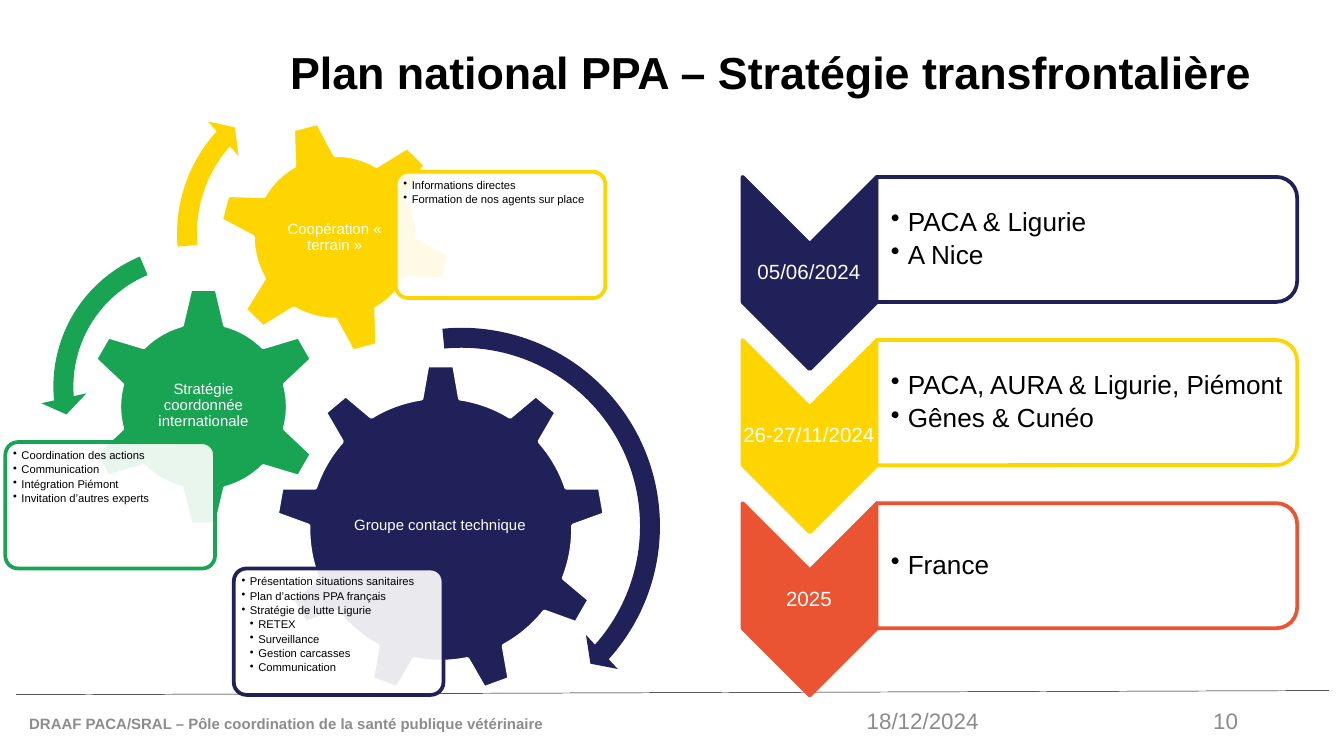
from lxml import etree
from pptx import Presentation
from pptx.dml.color import RGBColor
from pptx.enum.shapes import MSO_CONNECTOR, MSO_SHAPE
from pptx.enum.text import MSO_ANCHOR, PP_ALIGN
from pptx.oxml.ns import qn
from pptx.util import Pt

LEFT, CENTER, RIGHT = PP_ALIGN.LEFT, PP_ALIGN.CENTER, PP_ALIGN.RIGHT
TOP, MIDDLE = MSO_ANCHOR.TOP, MSO_ANCHOR.MIDDLE
GEAR_6, GEAR_9 = MSO_SHAPE.GEAR_6, MSO_SHAPE.GEAR_9
ARC, LEFT_ARC = MSO_SHAPE.CIRCULAR_ARROW, MSO_SHAPE.LEFT_CIRCULAR_ARROW
ROUNDED, ROUND_TOP = MSO_SHAPE.ROUNDED_RECTANGLE, MSO_SHAPE.ROUND_2_SAME_RECTANGLE
CHEVRON = MSO_SHAPE.CHEVRON

COLORS = {
    "navy": "21215A", "green": "19A453", "yellow": "FFD500", "orange": "EA5433",
    "white": "FFFFFF", "black": "000000", "gray": "8C8C8C",
}

presentation = Presentation()
presentation.slide_width, presentation.slide_height = Pt(720), Pt(405)
slide = presentation.slides.add_slide(presentation.slide_layouts[6])


def add_shape(kind, box, fill, line=None, rotation=0, adjustments=(), opacity=100):
    shape = slide.shapes.add_shape(kind, *[Pt(length) for length in box])
    shape.shadow.inherit = False
    shape.rotation = rotation
    for index, value in enumerate(adjustments):
        shape.adjustments[index] = value
    shape.fill.solid()
    shape.fill.fore_color.rgb = RGBColor.from_string(COLORS[fill])
    if opacity < 100:
        color = shape.fill._xPr.find(qn("a:solidFill"))[0]
        etree.SubElement(color, qn("a:alpha"), val=str(opacity * 1000))
    if line:
        shape.line.color.rgb = RGBColor.from_string(COLORS[line])
        shape.line.width = Pt(2)
    else:
        shape.line.fill.background()


def add_text(box, lines, size, color, insets=(7.2, 3.6, 7.2, 3.6), align=LEFT,
             anchor=MIDDLE, bold=False, spacing=0.9, indent=0):
    """Write (level, text) lines; a non-zero indent makes them bullets."""
    frame = slide.shapes.add_textbox(*[Pt(length) for length in box]).text_frame
    frame.word_wrap = True
    frame.vertical_anchor = anchor
    (frame.margin_left, frame.margin_top,
     frame.margin_right, frame.margin_bottom) = [Pt(inset) for inset in insets]
    for index, (level, text) in enumerate(lines):
        paragraph = frame.paragraphs[0] if index == 0 else frame.add_paragraph()
        if indent:
            properties = paragraph._p.get_or_add_pPr()
            properties.set("marL", str(Pt(indent * level)))
            properties.set("indent", str(-Pt(indent)))
            etree.SubElement(properties, qn("a:buChar"), char="•")
            paragraph.level = level
            paragraph.space_after = Pt(size * 0.2)
        paragraph.alignment = align
        paragraph.line_spacing = spacing
        run = paragraph.add_run()
        run.text = text
        run.font.name = "Arial"
        run.font.size = Pt(size)
        run.font.bold = bold
        run.font.color.rgb = RGBColor.from_string(COLORS[color])


# Footer rule
rule = slide.shapes.add_connector(
    MSO_CONNECTOR.STRAIGHT, Pt(8.6), Pt(372.2), Pt(712), Pt(370))
rule.line.color.rgb = RGBColor.from_string(COLORS["black"])
rule.line.width = Pt(0.25)
etree.SubElement(rule._element.spPr, qn("a:effectLst"))

# Footer texts and title
add_text((8.6, 376.6, 297.4, 21.6),
         [(0, "DRAAF PACA/SRAL – Pôle coordination de la santé publique vétérinaire")],
         8, "gray", bold=True, spacing=1)
add_text((625.7, 375.1, 44.6, 21.6), [(0, "10")], 12, "gray", align=RIGHT, spacing=1)
add_text((457.2, 375.1, 78.5, 21.6), [(0, "18/12/2024")], 12, "gray", spacing=1)
add_text((148.3, 0.7, 535, 78.5),
         [(0, "Plan national PPA – Stratégie transfrontalière")], 24, "black", bold=True)

# Gears, each with its label and a callout list
gears = [
    (GEAR_9, "navy", 0, (147.6, 195.1, 177.1, 177.1),
     "Groupe contact technique", (182.9, 236.2, 105.8, 90.7), (125.3, 304.6),
     [(1, "Présentation situations sanitaires"), (1, "Plan d’actions PPA français"),
      (1, "Stratégie de lutte Ligurie"), (2, "RETEX"), (2, "Surveillance"),
      (2, "Gestion carcasses"), (2, "Communication")]),
    (GEAR_6, "green", 0, (44.6, 153.4, 128.9, 128.9),
     "Stratégie coordonnée internationale", (77, 185.8, 64.1, 63.4), (2.9, 236.9),
     [(1, "Coordination des actions"), (1, "Communication"),
      (1, "Intégration Piémont"), (1, "Invitation d’autres experts")]),
    (GEAR_6, "yellow", 345, (116.6, 64.1, 126, 126),
     "Coopération « terrain »", (144, 92.2, 70.6, 70.6), (212, 92),
     [(1, "Informations directes"), (1, "Formation de nos agents sur place")]),
]
for kind, color, rotation, gear_box, label, label_box, (left, top), items in gears:
    add_shape(kind, gear_box, color, "white", rotation)
    add_text(label_box, [(0, label)], 8, "white", (0.4,) * 4, CENTER)
    add_shape(ROUNDED, (left, top, 112.3, 67.7), "white", color,
              adjustments=[0.1], opacity=90)
    add_text((left + 1.9, top + 1.9, 108.7, 63.4), items, 6, "black",
             (2.2,) * 4, anchor=TOP, indent=4.5)

# Rotation arrows around the gears
arrows = [
    (ARC, "navy", (133.9, 168.5, 226.8), (0.047, 2.99, 25.136, 158.668, 0.055)),
    (LEFT_ARC, "green", (21.6, 124.6, 164.9), (0.065, 4.3, 104.891, 148.378, 0.075)),
    (ARC, "yellow", (87.8, 36.7, 177.1), (0.06, 3.941, 133.138, 105.082, 0.07)),
]
for kind, color, (left, top, side), adjustments in arrows:
    add_shape(kind, (left, top, side, side), color, adjustments=adjustments)

# Timeline of chevrons and meeting boxes
meetings = [
    ("navy", "05/06/2024", ["PACA & Ligurie", "A Nice"]),
    ("yellow", "26-27/11/2024", ["PACA, AURA & Ligurie, Piémont", "Gênes & Cunéo"]),
    ("orange", "2025", ["France"]),
]
for row, (color, date, places) in enumerate(meetings):
    offset = row * 87.4
    add_shape(CHEVRON, (382.3, 110.3 + offset, 103, 72), color, color, 90)
    add_text((397.4, 130.8 + offset, 72, 31), [(0, date)], 11, "white",
             (0.4,) * 4, CENTER)
    add_shape(ROUND_TOP, (548.7, 15.6 + offset, 67, 225.4), "white", color, 90,
              opacity=90)
    add_text((469.4, 98.1 + offset, 222.5, 60.5), [(1, place) for place in places],
             14, "black", (7.9, 0.7, 0.7, 0.7), indent=9)

presentation.save("out.pptx")
